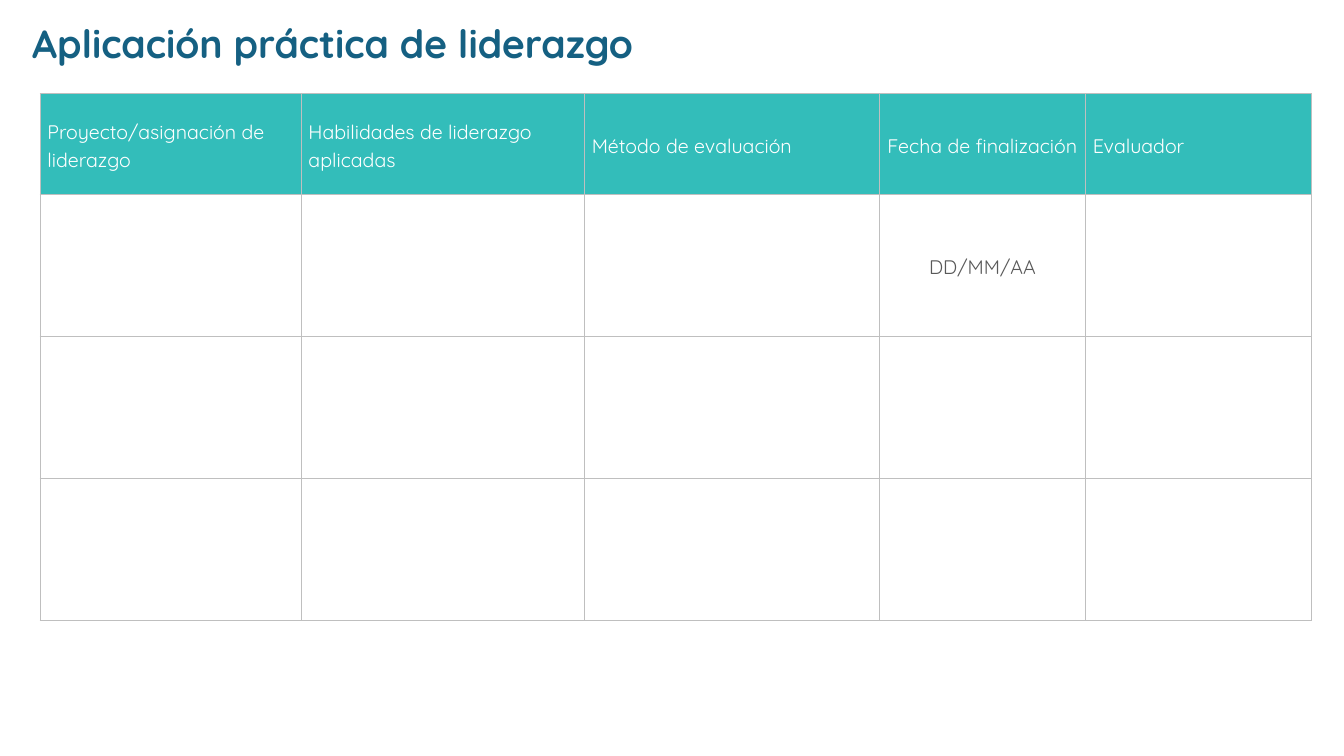
import pptx
import pptx.dml.color
import pptx.enum.text
import pptx.oxml
import pptx.oxml.ns
import pptx.util
from pptx.util import Inches

TITLE_BLUE = pptx.dml.color.RGBColor(0x15, 0x60, 0x82)
HEADER_TEAL = pptx.dml.color.RGBColor(0x33, 0xBD, 0xBA)
WHITE = pptx.dml.color.RGBColor(0xFF, 0xFF, 0xFF)
DATE_GRAY = pptx.dml.color.RGBColor(0x59, 0x59, 0x59)
BORDER_GRAY = pptx.dml.color.RGBColor(0xBF, 0xBF, 0xBF)
CENTER = pptx.enum.text.PP_ALIGN.CENTER
LEFT = pptx.enum.text.PP_ALIGN.LEFT

HEADERS = [
    "Proyecto/asignación de liderazgo",
    "Habilidades de liderazgo aplicadas",
    "Método de evaluación",
    "Fecha de finalización",
    "Evaluador",
]
COLUMN_WIDTHS = [2.59, 2.81, 2.92, 2.05, 2.24]
ROW_HEIGHTS = [1, 1.41, 1.41, 1.41]
DATE_COLUMN = 3


def add_run(paragraph, text, size, color, bold=False):
    run = paragraph.add_run()
    run.text = text
    run.font.name = "Quicksand"
    run.font.size = pptx.util.Pt(size)
    run.font.bold = bold
    run.font.color.rgb = color


def add_borders(cell):
    """Draw a 1 pt gray line on all four sides; call before filling the cell."""
    properties = cell._tc.get_or_add_tcPr()
    for side in ("lnL", "lnR", "lnT", "lnB"):
        properties.append(pptx.oxml.parse_xml(
            f'<a:{side} {pptx.oxml.ns.nsdecls("a")} w="{pptx.util.Pt(1)}">'
            f'<a:solidFill><a:srgbClr val="{BORDER_GRAY}"/></a:solidFill></a:{side}>'
        ))


presentation = pptx.Presentation()
presentation.slide_width = Inches(13.33)
presentation.slide_height = Inches(7.5)
slide = presentation.slides.add_slide(presentation.slide_layouts[6])

title = slide.shapes.add_textbox(Inches(0.22), Inches(0.14), Inches(8.08), Inches(0.57)).text_frame
title.word_wrap = True
title.auto_size = pptx.enum.text.MSO_AUTO_SIZE.SHAPE_TO_FIT_TEXT
add_run(title.paragraphs[0], "Aplicación práctica de liderazgo", 28, TITLE_BLUE, bold=True)

evaluation = slide.shapes.add_table(
    len(ROW_HEIGHTS), len(COLUMN_WIDTHS),
    Inches(0.4), Inches(0.93), Inches(sum(COLUMN_WIDTHS)), Inches(sum(ROW_HEIGHTS)),
).table
evaluation.horz_banding = False
for column, width in zip(evaluation.columns, COLUMN_WIDTHS):
    column.width = Inches(width)
for row, height in zip(evaluation.rows, ROW_HEIGHTS):
    row.height = Inches(height)

entries = {(0, column): (header, WHITE) for column, header in enumerate(HEADERS)}
entries[1, DATE_COLUMN] = ("DD/MM/AA", DATE_GRAY)

for row in range(len(ROW_HEIGHTS)):
    for column in range(len(COLUMN_WIDTHS)):
        cell = evaluation.cell(row, column)
        add_borders(cell)
        cell.fill.solid()
        cell.fill.fore_color.rgb = HEADER_TEAL if row == 0 else WHITE
        cell.vertical_anchor = pptx.enum.text.MSO_ANCHOR.MIDDLE
        cell.margin_left = cell.margin_right = Inches(0.07)
        cell.margin_top = cell.margin_bottom = 0
        if (row, column) in entries:
            text, color = entries[row, column]
            paragraph = cell.text_frame.paragraphs[0]
            paragraph.alignment = CENTER if column == DATE_COLUMN else LEFT
            paragraph.line_spacing = 1.15
            paragraph.space_after = pptx.util.Pt(8)
            add_run(paragraph, text, 14, color)

presentation.save("out.pptx")
